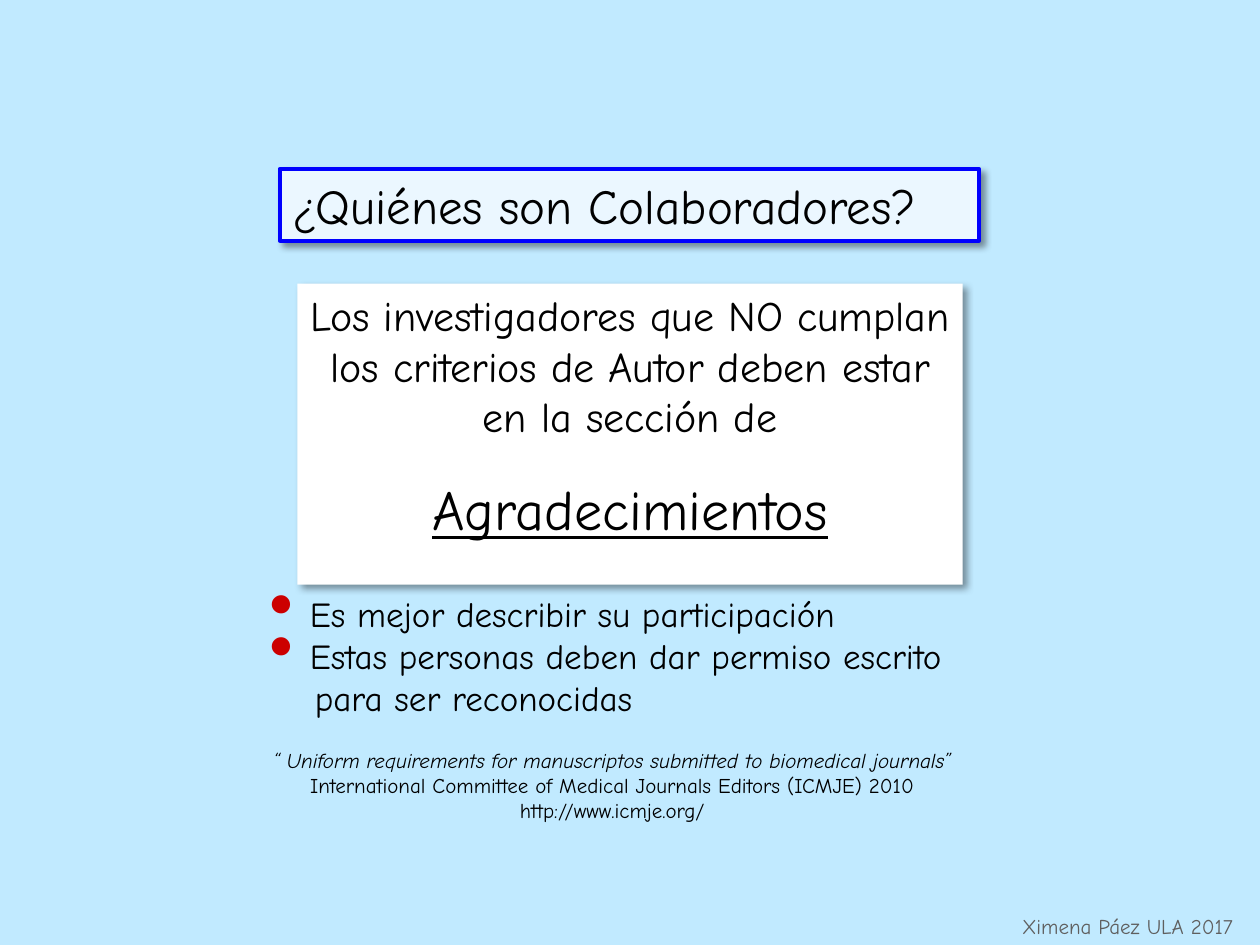
import pptx
import pptx.util
import pptx.dml.color
import pptx.enum.shapes
import pptx.enum.text
import pptx.oxml.ns
from lxml import etree

Inches = pptx.util.Inches
Pt = pptx.util.Pt
ALIGN = pptx.enum.text.PP_ALIGN
FONT = "Comic Neue"
COLORS = {
    "sky": "C1EAFF", "pale": "EBF7FF", "white": "FFFFFF", "blue": "0000FF",
    "black": "000000", "red": "CC0000", "gray": "5F5F5F",
}


def color(name):
    return pptx.dml.color.RGBColor.from_string(COLORS[name])


def add(parent, tag, **attrs):
    return etree.SubElement(parent, pptx.oxml.ns.qn(tag), attrs)


def write(frame, lines, align=ALIGN.CENTER, ink="black"):
    """Fill a frame with (text, size) lines and return the paragraphs."""
    frame.word_wrap = True
    frame.vertical_anchor = pptx.enum.text.MSO_ANCHOR.TOP
    for i, (text, size) in enumerate(lines):
        para = frame.paragraphs[0] if i == 0 else frame.add_paragraph()
        para.text = text
        para.alignment = align
        para.font.name = FONT
        para.font.size = Pt(size)
        para.font.color.rgb = color(ink)
    return frame.paragraphs


def card(slide, box, fill, edge=None):
    """Draw a filled rectangle with a soft shadow."""
    kind = pptx.enum.shapes.MSO_SHAPE.RECTANGLE
    shape = slide.shapes.add_shape(kind, *map(Inches, box))
    shape.fill.solid()
    shape.fill.fore_color.rgb = color(fill)
    if edge:
        shape.line.color.rgb = color(edge)
        shape.line.width = Pt(2.25)
    else:
        shape.line.fill.background()
    shape.shadow.inherit = False
    effects = shape._element.spPr.find(pptx.oxml.ns.qn("a:effectLst"))
    shade = add(effects, "a:outerShdw", blurRad=str(Pt(4)), dist=str(Pt(3)),
                dir="2700000", algn="tl", rotWithShape="0")
    tint = add(shade, "a:srgbClr", val=COLORS["black"])
    add(tint, "a:alpha", val="40000")
    return shape.text_frame


def label(slide, box):
    return slide.shapes.add_textbox(*map(Inches, box)).text_frame


def title(slide, box):
    write(card(slide, box, "pale", "blue"),
          [("¿Quiénes son Colaboradores?", 28)], ALIGN.LEFT)


def rule(slide, box):
    paras = write(card(slide, box, "white"), [
        ("Los investigadores que NO cumplan los criterios de Autor "
         "deben estar en la sección de", 24),
        ("Agradecimientos", 32),
    ])
    paras[1].space_before = Pt(19)
    paras[1].font.underline = True


def advice(slide, box):
    paras = write(label(slide, box), [
        ("Es mejor describir su participación", 20),
        ("Estas personas deben dar permiso escrito", 20),
        ("para ser reconocidas", 20),
    ], ALIGN.LEFT)
    indent = Inches(0.32)
    for para in paras[:2]:
        props = para._p.get_or_add_pPr()
        props.set("marL", str(indent))
        props.set("indent", str(-indent))
        paint = etree.Element(pptx.oxml.ns.qn("a:buClr"))
        add(paint, "a:srgbClr", val=COLORS["red"])
        size = etree.Element(pptx.oxml.ns.qn("a:buSzPct"), val="200000")
        dot = etree.Element(pptx.oxml.ns.qn("a:buChar"), char="•")
        for i, part in enumerate((paint, size, dot)):
            props.insert(i, part)
    # Continuation line sits slightly inside the bulleted text
    paras[2]._p.get_or_add_pPr().set("marL", str(Inches(0.36)))


def source(slide, box):
    paras = write(label(slide, box), [
        ("“ Uniform requirements for manuscriptos submitted to "
         "biomedical journals”", 12),
        ("International Committee of Medical Journals Editors (ICMJE) 2010", 12),
        ("http://www.icmje.org/", 12),
    ])
    paras[0].font.italic = True


def credit(slide, box):
    write(label(slide, box), [("Ximena Páez ULA 2017", 12)], ink="gray")


def main():
    deck = pptx.Presentation()
    deck.slide_width, deck.slide_height = Inches(10), Inches(7.5)
    slide = deck.slides.add_slide(deck.slide_layouts[6])
    slide.background.fill.solid()
    slide.background.fill.fore_color.rgb = color("sky")

    rule(slide, (2.36, 2.25, 5.28, 2.39))
    title(slide, (2.22, 1.34, 5.55, 0.57))
    advice(slide, (2.04, 4.65, 5.92, 1.1))
    source(slide, (1.74, 5.88, 6.24, 0.71))
    credit(slide, (7.95, 7.2, 2, 0.3))
    deck.save("out.pptx")


if __name__ == "__main__":
    main()
